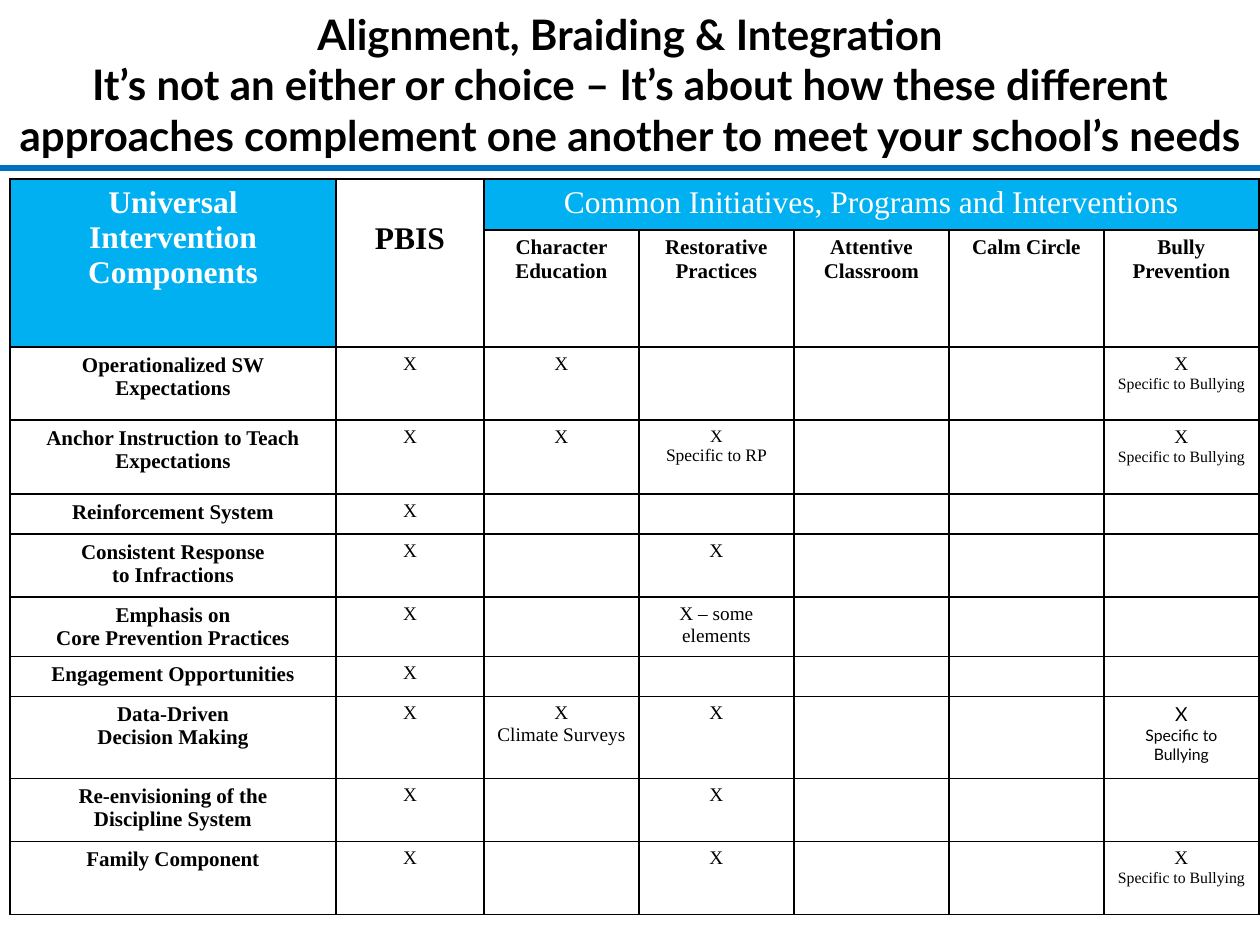
from dataclasses import dataclass
from itertools import product

from lxml import etree
from pptx import Presentation
from pptx.dml.color import RGBColor
from pptx.enum.shapes import MSO_CONNECTOR
from pptx.enum.text import MSO_ANCHOR, MSO_AUTO_SIZE, PP_ALIGN
from pptx.oxml.ns import qn
from pptx.util import Emu, Pt

PX_PER_INCH = 126


def px(length):
    return Emu(round(length * 914400 / PX_PER_INCH))


@dataclass(frozen=True)
class Theme:
    black: str = "000000"
    white: str = "FFFFFF"
    header: str = "00B0F0"
    rule: str = "0070C0"
    sans: str = "Lato"
    serif: str = "Times New Roman"
    title_size: int = 24
    header_size: int = 18
    label_size: int = 12
    mark_size: int = 11
    small_size: int = 10
    detail_size: int = 9


THEME = Theme()

TITLE = (
    "Alignment, Braiding & Integration\v"
    "It’s not an either or choice – It’s about how these different "
    "approaches complement one another to meet your school’s needs"
)
COLUMN_WIDTHS = [326, 148] + [155] * 5
ROW_HEIGHTS = [51, 117, 73, 74, 40, 63, 59, 40, 82, 63, 73]
PROGRAMS = ["Character Education", "Restorative Practices", "Attentive Classroom",
            "Calm Circle", "Bully Prevention"]
COMPONENTS = [
    "Operationalized SW Expectations",
    "Anchor Instruction to Teach Expectations",
    "Reinforcement System",
    "Consistent Response\nto Infractions",
    "Emphasis on\nCore Prevention Practices",
    "Engagement Opportunities",
    "Data-Driven\nDecision Making",
    "Re-envisioning of the\nDiscipline System",
    "Family Component",
]
PBIS, CHARACTER, RESTORATIVE, BULLY = 1, 2, 3, 6
FIRST_COMPONENT_ROW = 2

# Component index -> {column: text}; every component is also marked for PBIS.
MARKS = {
    0: {CHARACTER: "X", BULLY: "X\nSpecific to Bullying"},
    1: {CHARACTER: "X", RESTORATIVE: "X\nSpecific to RP", BULLY: "X\nSpecific to Bullying"},
    3: {RESTORATIVE: "X"},
    4: {RESTORATIVE: "X – some elements"},
    6: {CHARACTER: "X\nClimate Surveys", RESTORATIVE: "X", BULLY: "X\nSpecific to Bullying"},
    7: {RESTORATIVE: "X"},
    8: {RESTORATIVE: "X", BULLY: "X\nSpecific to Bullying"},
}
SANS_MARK = (6, BULLY)


class SlideBuilder:
    """Holds the theme and the slide being built."""

    def __init__(self, slide, theme):
        self.slide = slide
        self.theme = theme

    def format_runs(self, paragraph, size, color, bold, font):
        paragraph.alignment = PP_ALIGN.CENTER
        for run in paragraph.runs:
            run.font.size = Pt(size)
            run.font.bold = bold
            run.font.name = font
            run.font.color.rgb = RGBColor.from_string(color)

    def title(self, text, left, top, width, height):
        shape = self.slide.shapes.title
        shape.left, shape.top = px(left), px(top)
        shape.width, shape.height = px(width), px(height)
        frame = shape.text_frame
        frame.text = text
        frame.word_wrap = True
        frame.auto_size = MSO_AUTO_SIZE.NONE
        frame.vertical_anchor = MSO_ANCHOR.MIDDLE
        self.format_runs(frame.paragraphs[0], self.theme.title_size,
                         self.theme.black, True, self.theme.sans)

    def rule(self, left, right, y, weight):
        line = self.slide.shapes.add_connector(
            MSO_CONNECTOR.STRAIGHT, px(left), px(y), px(right), px(y))
        line.line.color.rgb = RGBColor.from_string(self.theme.rule)
        line.line.width = Pt(weight)
        etree.SubElement(line._element.spPr, qn("a:effectLst"))

    def table(self, left, top, widths, heights):
        """Add an empty white grid with thin black borders."""
        table = self.slide.shapes.add_table(
            len(heights), len(widths), px(left), px(top),
            px(sum(widths)), px(sum(heights))).table
        table.first_row = table.horz_banding = False
        for column, width in zip(table.columns, widths):
            column.width = px(width)
        for row, height in zip(table.rows, heights):
            row.height = px(height)
        for cell in table.iter_cells():
            self.fill(cell, self.theme.white)
            self.borders(cell)
        return table

    def fill(self, cell, color):
        cell.fill.solid()
        cell.fill.fore_color.rgb = RGBColor.from_string(color)

    def borders(self, cell):
        properties = cell._tc.get_or_add_tcPr()
        for index, side in enumerate(("lnL", "lnR", "lnT", "lnB")):
            border = etree.Element(qn(f"a:{side}"), w=str(Pt(1)))
            solid = etree.SubElement(border, qn("a:solidFill"))
            etree.SubElement(solid, qn("a:srgbClr"), val=self.theme.black)
            properties.insert(index, border)

    def empty_cell(self, cell):
        """Keep an empty cell from stretching its row."""
        paragraph = cell.text_frame.paragraphs[0]
        etree.SubElement(paragraph._p, qn("a:endParaRPr"),
                         sz=str(self.theme.mark_size * 100))

    def cell(self, cell, text, sizes, color=None, bold=False, font=None):
        """Write one paragraph per line; the last size serves the remaining lines."""
        cell.text_frame.text = text
        for index, paragraph in enumerate(cell.text_frame.paragraphs):
            size = sizes[min(index, len(sizes) - 1)]
            self.format_runs(paragraph, size, color or self.theme.black,
                             bold, font or self.theme.serif)


def mark_sizes(text):
    if "Bullying" in text:
        return [THEME.mark_size, THEME.detail_size]
    return [THEME.small_size if "RP" in text else THEME.mark_size]


def fill_header(builder, table):
    components, pbis, programs = (table.cell(0, column) for column in range(3))
    components.merge(table.cell(1, 0))
    pbis.merge(table.cell(1, PBIS))
    programs.merge(table.cell(0, BULLY))
    size = [THEME.header_size]
    builder.cell(components, "Universal Intervention Components", size, THEME.white, True)
    builder.cell(pbis, "PBIS", size, bold=True)
    builder.cell(programs, "Common Initiatives, Programs and Interventions", size, THEME.white)
    pbis.margin_top = px(42)
    for cell in (components, programs):
        builder.fill(cell, THEME.header)
    for column, program in enumerate(PROGRAMS, start=CHARACTER):
        builder.cell(table.cell(1, column), program, [THEME.label_size], bold=True)


def fill_components(builder, table):
    for index, component in enumerate(COMPONENTS):
        builder.cell(table.cell(index + FIRST_COMPONENT_ROW, 0), component,
                     [THEME.label_size], bold=True)
    for index, column in product(range(len(COMPONENTS)), range(PBIS, BULLY + 1)):
        cell = table.cell(index + FIRST_COMPONENT_ROW, column)
        text = "X" if column == PBIS else MARKS.get(index, {}).get(column)
        if text:
            font = THEME.sans if (index, column) == SANS_MARK else THEME.serif
            builder.cell(cell, text, mark_sizes(text), font=font)
        else:
            builder.empty_cell(cell)


def main():
    presentation = Presentation()
    presentation.slide_width, presentation.slide_height = px(1260), px(945)
    slide = presentation.slides.add_slide(presentation.slide_layouts[5])
    builder = SlideBuilder(slide, THEME)
    builder.title(TITLE, 0, 0, 1260, 168)
    builder.rule(0, 1260, 168, 3)
    table = builder.table(10, 179, COLUMN_WIDTHS, ROW_HEIGHTS)
    fill_header(builder, table)
    fill_components(builder, table)
    presentation.save("out.pptx")


if __name__ == "__main__":
    main()
